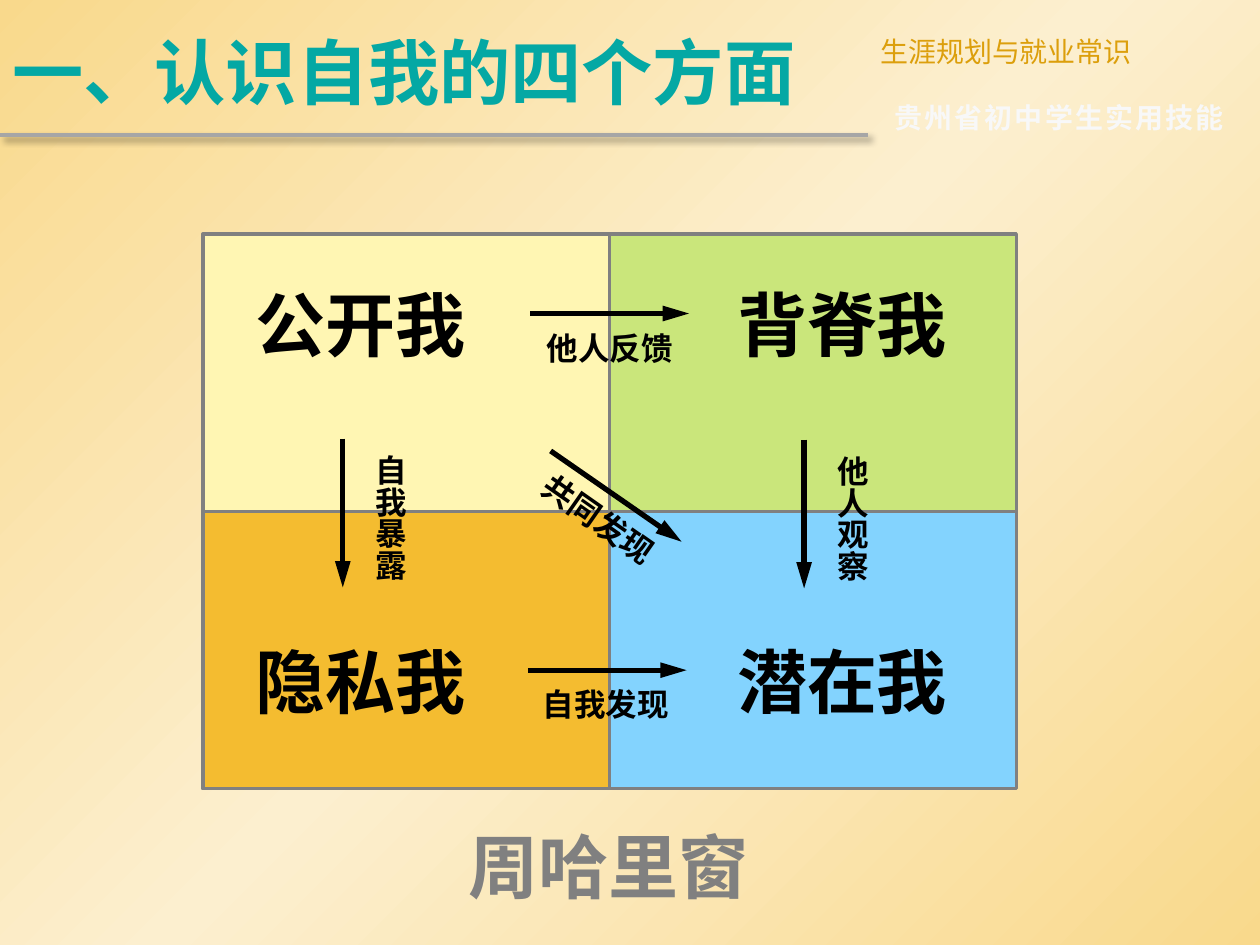
from copy import deepcopy
from dataclasses import dataclass

from pptx import Presentation
from pptx.dml.color import RGBColor
from pptx.enum.shapes import MSO_CONNECTOR, MSO_SHAPE
from pptx.enum.text import MSO_ANCHOR, MSO_AUTO_SIZE, PP_ALIGN
from pptx.oxml import parse_xml
from pptx.oxml.ns import nsdecls, qn
from pptx.util import Cm, Pt

STRAIGHT = MSO_CONNECTOR.STRAIGHT
RECTANGLE = MSO_SHAPE.RECTANGLE
MIDDLE = MSO_ANCHOR.MIDDLE
JUSTIFY = PP_ALIGN.JUSTIFY
FIT_SHAPE = MSO_AUTO_SIZE.SHAPE_TO_FIT_TEXT

FONT = "Noto Sans CJK SC"
BLACK = RGBColor(0x00, 0x00, 0x00)
GREY = RGBColor(0x80, 0x80, 0x80)
RULE_GREY = RGBColor(0xA6, 0xA6, 0xA6)
TEAL = RGBColor(0x04, 0xA8, 0xA4)
OCHRE = RGBColor(0xDC, 0x9F, 0x0C)
OFF_WHITE = RGBColor(0xF8, 0xF8, 0xF8)
SAND = RGBColor(0xF9, 0xD9, 0x8C)
CREAM = RGBColor(0xFC, 0xEF, 0xCF)
YELLOW = RGBColor(0xFF, 0xF6, 0xB3)
GREEN = RGBColor(0xCA, 0xE6, 0x7B)
ORANGE = RGBColor(0xF4, 0xBC, 0x30)
BLUE = RGBColor(0x83, 0xD3, 0xFE)

# Window grid, in centimetres
GRID_LEFT, GRID_TOP = 4.09, 4.72
PANE_WIDTH, PANE_HEIGHT = 8.2, 5.59
NAME_LEFTS, NAME_TOPS = (4.9, 14.61), (5.56, 12.75)


@dataclass(frozen=True)
class Label:
    text: str
    left: float
    top: float
    width: float
    height: float
    size: float = 18
    color: RGBColor = BLACK
    bold: bool = True
    wrap: bool = False
    vertical: bool = False
    rotation: float = 0
    spacing: int = 0


@dataclass(frozen=True)
class Pane:
    name: str
    column: int
    row: int
    color: RGBColor


@dataclass(frozen=True)
class Step:
    start: tuple[float, float]
    end: tuple[float, float]
    label: Label


PANES = [
    Pane("公开我", 0, 0, YELLOW),
    Pane("背脊我", 1, 0, GREEN),
    Pane("隐私我", 0, 1, ORANGE),
    Pane("潜在我", 1, 1, BLUE),
]

STEPS = [
    Step((10.69, 6.32), (13.89, 6.32), Label("他人反馈", 10.77, 6.5, 3.07, 1.02)),
    Step((10.64, 13.51), (13.84, 13.51), Label("自我发现", 10.69, 13.69, 3.07, 1.02)),
    Step((6.91, 8.84), (6.91, 11.84),
         Label("自我暴露", 7.11, 8.92, 1.27, 3.48, wrap=True, vertical=True)),
    Step((16.21, 8.86), (16.21, 11.86),
         Label("他人观察", 16.41, 8.94, 1.27, 3.48, wrap=True, vertical=True)),
    Step((11.1, 9.09), (13.74, 10.92),
         Label("共同发现", 10.54, 9.96, 3.07, 1.02, rotation=35)),
]


def paint_background(slide) -> None:
    fill = slide.background.fill
    fill.gradient()
    fill.gradient_angle = 315
    stop_list = slide.element.find(".//" + qn("a:gsLst"))
    stop_list.append(deepcopy(stop_list[0]))
    for stop, position, color in zip(fill.gradient_stops, (0, 0.5, 1), (SAND, CREAM, SAND)):
        stop.position = position
        stop.color.rgb = color


def add_label(shapes, label: Label):
    shape = shapes.add_textbox(Cm(label.left), Cm(label.top), Cm(label.width), Cm(label.height))
    shape.rotation = label.rotation
    frame = shape.text_frame
    frame.word_wrap = label.wrap
    frame.auto_size = FIT_SHAPE
    if label.vertical:
        frame._txBody.bodyPr.set("vert", "eaVert")
    run = frame.paragraphs[0].add_run()
    run.text = label.text
    font = run.font
    font.size = Pt(label.size)
    font.bold = label.bold
    font.color.rgb = label.color
    font.name = FONT
    properties = run._r.get_or_add_rPr()
    properties.append(parse_xml(f'<a:ea {nsdecls("a")} typeface="{FONT}"/>'))
    if label.spacing:
        properties.set("spc", str(label.spacing))
    return frame


def add_line(shapes, start: tuple[float, float], end: tuple[float, float],
             color: RGBColor, width: float, effect: str = ""):
    line = shapes.add_connector(STRAIGHT, *(Cm(value) for value in start + end))
    line.line.color.rgb = color
    line.line.width = Pt(width)
    line._element.spPr.append(
        parse_xml(f'<a:effectLst {nsdecls("a")}>{effect}</a:effectLst>'))
    return line


def add_pane(shapes, pane: Pane) -> None:
    shape = shapes.add_shape(
        RECTANGLE,
        Cm(GRID_LEFT + pane.column * PANE_WIDTH), Cm(GRID_TOP + pane.row * PANE_HEIGHT),
        Cm(PANE_WIDTH), Cm(PANE_HEIGHT))
    shape.shadow.inherit = False
    shape.fill.solid()
    shape.fill.fore_color.rgb = pane.color
    shape.line.color.rgb = GREY
    shape.line.width = Pt(2)


def add_step(shapes, step: Step) -> None:
    group = shapes.add_group_shape()
    arrow = add_line(group.shapes, step.start, step.end, BLACK, 3)
    arrow.line._get_or_add_ln().append(
        parse_xml(f'<a:tailEnd {nsdecls("a")} type="triangle" w="med" len="lg"/>'))
    add_label(group.shapes, step.label)


def main() -> None:
    presentation = Presentation()
    presentation.slide_width, presentation.slide_height = Cm(25.4), Cm(19.05)
    slide = presentation.slides.add_slide(presentation.slide_layouts[6])
    shapes = slide.shapes
    paint_background(slide)

    # Header
    shadow = ('<a:outerShdw blurRad="50800" dist="38100" dir="2700000" algn="tl" '
              'rotWithShape="0"><a:srgbClr val="000000"><a:alpha val="40000"/>'
              '</a:srgbClr></a:outerShdw>')
    add_line(shapes, (0, 2.72), (17.5, 2.72), RULE_GREY, 2.25, shadow)
    course = add_label(shapes, Label("生涯规划与就业常识", 17.5, 0.58, 7.9, 0.94, 16,
                                     OCHRE, bold=False, wrap=True))
    course.paragraphs[0].alignment = JUSTIFY
    add_label(shapes, Label("贵州省初中学生实用技能", 17.78, 1.9, 7.3, 0.94, 16,
                            OFF_WHITE, spacing=130))
    title = add_label(shapes, Label("一、认识自我的四个方面", 0, 0.13, 17.5, 2.59, 40.7,
                                    TEAL, wrap=True))
    title.auto_size = MSO_AUTO_SIZE.NONE
    title.vertical_anchor = MIDDLE

    # Four panes, their names and the caption
    for pane in PANES:
        add_pane(shapes, pane)
    for pane in PANES:
        add_label(shapes, Label(pane.name, NAME_LEFTS[pane.column], NAME_TOPS[pane.row],
                                4.78, 1.96, 40))
    add_label(shapes, Label("周哈里窗", 9.19, 16.48, 6.22, 1.96, 40, GREY))

    # Labelled arrows between the panes
    for step in STEPS:
        add_step(shapes, step)

    presentation.save("out.pptx")


if __name__ == "__main__":
    main()
